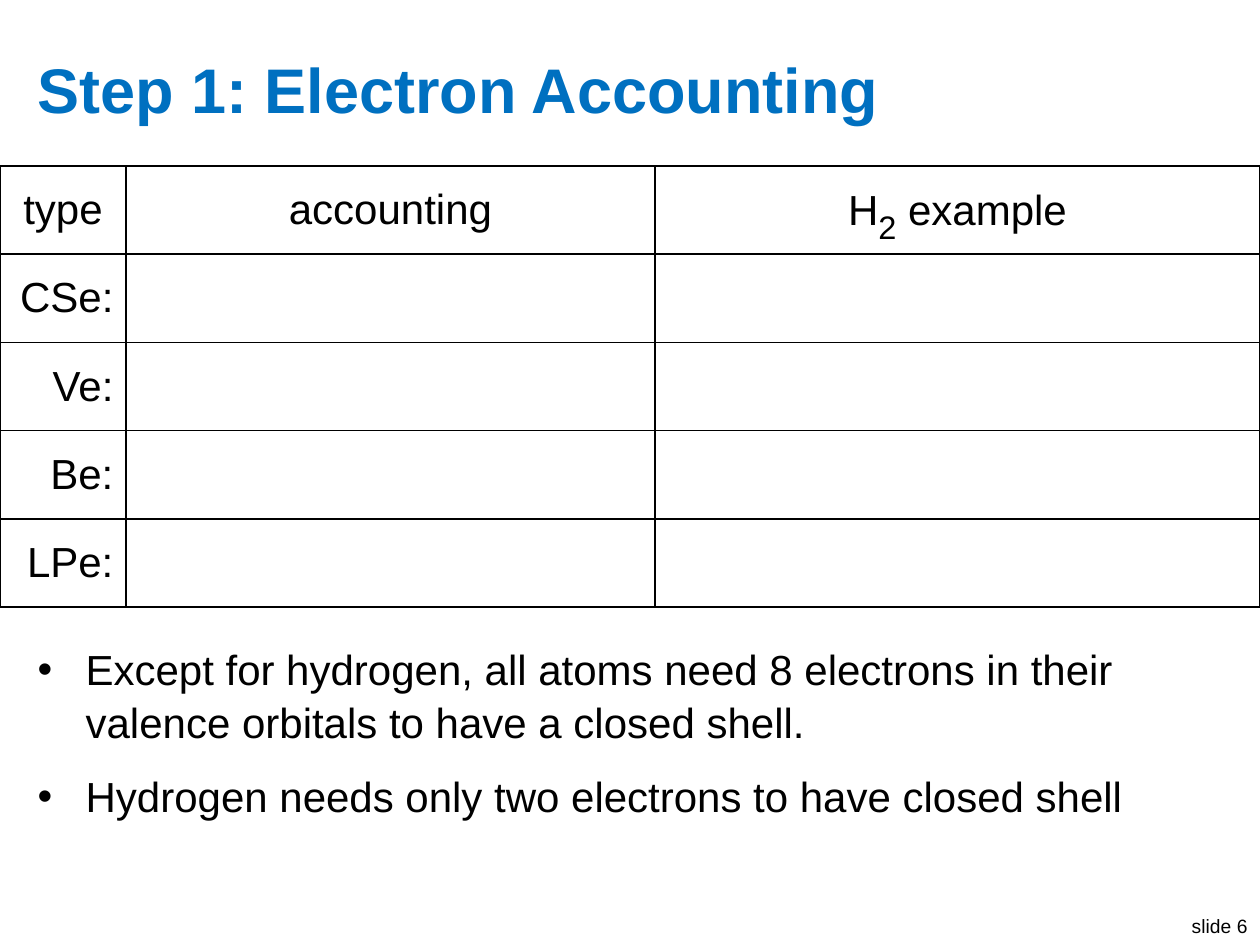
"""Build the electron accounting slide: title, accounting table and bullet list."""
from lxml.etree import SubElement
from pptx import Presentation
from pptx.dml.color import RGBColor
from pptx.enum.text import MSO_ANCHOR, MSO_AUTO_SIZE, PP_ALIGN
from pptx.oxml.ns import qn
from pptx.util import Emu, Pt

BLUE = RGBColor(0x00, 0x70, 0xC0)
BLACK = RGBColor(0x00, 0x00, 0x00)
WHITE = RGBColor(0xFF, 0xFF, 0xFF)


def px(length):
    return Emu(round(length * 914400 / 126))


def add_run(paragraph, text, size, color=BLACK, bold=False):
    run = paragraph.add_run()
    run.text = text
    run.font.name = "Arial"
    run.font.size = Pt(size)
    run.font.color.rgb = color
    run.font.bold = bold
    return run


prs = Presentation()
prs.slide_width, prs.slide_height = px(1260), px(945)
slide = prs.slides.add_slide(prs.slide_layouts[1])

title, body = slide.placeholders
title.left, title.top, title.width, title.height = px(25), px(38), px(1210), px(101)
title.text_frame.vertical_anchor = MSO_ANCHOR.MIDDLE
heading = title.text_frame.paragraphs[0]
heading.alignment = PP_ALIGN.LEFT
add_run(heading, "Step 1: Electron Accounting", 36, BLUE, True)

body.left, body.top, body.width, body.height = px(25), px(635), px(1210), px(280)
body.text_frame.auto_size = MSO_AUTO_SIZE.NONE
facts = [
    "Except for hydrogen, all atoms need 8 electrons in their valence orbitals to have a closed shell.",
    "Hydrogen needs only two electrons to have closed shell",
]
for index, fact in enumerate(facts):
    bullet = body.text_frame.add_paragraph() if index else body.text_frame.paragraphs[0]
    bullet.space_before = Pt(12)
    bullet.line_spacing = 1.05
    properties = bullet._p.get_or_add_pPr()
    properties.set("marL", str(px(48)))
    properties.set("indent", str(-px(48)))
    SubElement(properties, qn("a:buFont"), typeface="Arial")
    SubElement(properties, qn("a:buChar"), char="•")
    add_run(bullet, fact, 24)

rows = [["type", "accounting", "H"]] + [[kind, "", ""] for kind in ("CSe:", "Ve:", "Be:", "LPe:")]
accounting = slide.shapes.add_table(len(rows), 3, 0, px(166), px(1260), px(441)).table
for column, width in zip(accounting.columns, (126, 529, 605)):
    column.width = px(width)

for row_index, row in enumerate(rows):
    for column_index, text in enumerate(row):
        cell = accounting.cell(row_index, column_index)
        cell.vertical_anchor = MSO_ANCHOR.MIDDLE
        for side in ("L", "R", "T", "B"):
            border = SubElement(cell._tc.get_or_add_tcPr(), qn(f"a:ln{side}"), w=str(Pt(1)))
            border_fill = SubElement(border, qn("a:solidFill"))
            SubElement(border_fill, qn("a:srgbClr"), val=str(BLACK))
        cell.fill.solid()
        cell.fill.fore_color.rgb = WHITE
        if text:
            label = cell.text_frame.paragraphs[0]
            label.alignment = PP_ALIGN.RIGHT if row_index else PP_ALIGN.CENTER
            add_run(label, text, 24)

example = accounting.cell(0, 2).text_frame.paragraphs[0]
subscript = add_run(example, "2", 32)
subscript.font._element.set("baseline", "-25000")
add_run(example, " example", 24)

slide_number = slide.shapes.add_textbox(px(1165), px(908), px(95), px(37)).text_frame
slide_number.word_wrap = False
slide_number.auto_size = MSO_AUTO_SIZE.SHAPE_TO_FIT_TEXT
slide_number.paragraphs[0].alignment = PP_ALIGN.RIGHT
add_run(slide_number.paragraphs[0], "slide 6", 11)

prs.save("out.pptx")
